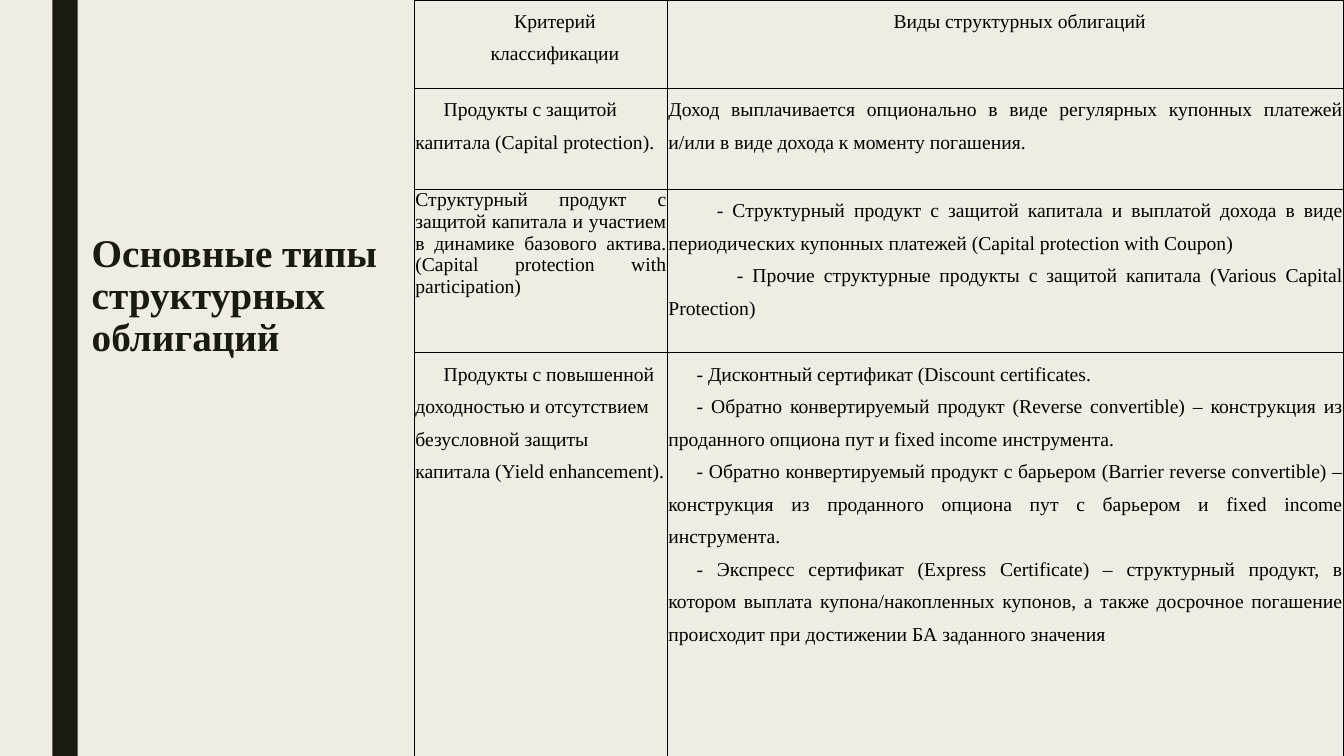
from dataclasses import dataclass

from lxml.etree import SubElement
from pptx import Presentation
from pptx.dml.color import RGBColor
from pptx.enum.shapes import MSO_SHAPE
from pptx.enum.text import MSO_ANCHOR, MSO_AUTO_SIZE, PP_ALIGN
from pptx.oxml.ns import qn
from pptx.util import Inches, Pt


@dataclass(frozen=True)
class Theme:
    """Colours, font and type sizes of the deck."""
    paper: RGBColor = RGBColor(0xEF, 0xED, 0xE3)
    dark: RGBColor = RGBColor(0x19, 0x1B, 0x0E)
    ink: RGBColor = RGBColor(0, 0, 0)
    font: str = "Times New Roman"
    title_size: int = 28
    body_size: int = 14
    border: int = 1


def write(para, text, *, font, size, color, bold=False, align=PP_ALIGN.LEFT, spacing=1.0, indent=0):
    """Write one formatted paragraph."""
    para.alignment = align
    para.line_spacing = spacing
    para.space_before = para.space_after = Pt(0)
    properties = para._p.get_or_add_pPr()
    properties.set("marL", "0")
    properties.set("indent", str(Inches(indent)))
    span = para.add_run()
    span.text = text
    span.font.name = font
    span.font.size = Pt(size)
    span.font.bold = bold
    span.font.color.rgb = color


class Slide:
    """Builds the elements of one page in a given theme."""

    def __init__(self, deck, theme):
        """Add a title-only page with a plain background."""
        self.theme = theme
        self.page = deck.slides.add_slide(deck.slide_layouts[5])
        self.page.background.fill.solid()
        self.page.background.fill.fore_color.rgb = theme.paper

    def bar(self, left, top, width, height):
        """Add a solid bar."""
        box = self.page.shapes.add_shape(
            MSO_SHAPE.RECTANGLE, Inches(left), Inches(top), Inches(width), Inches(height))
        box.shadow.inherit = False
        box.fill.solid()
        box.fill.fore_color.rgb = self.theme.dark
        box.line.fill.background()

    def title(self, text, left, top, width, height):
        """Place and fill the title placeholder."""
        box = self.page.shapes.title
        box.left, box.top = Inches(left), Inches(top)
        box.width, box.height = Inches(width), Inches(height)
        frame = box.text_frame
        frame.word_wrap = True
        frame.auto_size = MSO_AUTO_SIZE.NONE
        frame.vertical_anchor = MSO_ANCHOR.TOP
        write(frame.paragraphs[0], text, font=self.theme.font, size=self.theme.title_size,
              color=self.theme.dark, bold=True, spacing=0.89)

    def table(self, rows, left, top, widths, heights):
        """Add a bordered table whose cells are lists of (text, format) pairs."""
        frame = self.page.shapes.add_table(
            len(rows), len(widths), Inches(left), Inches(top),
            Inches(sum(widths)), Inches(sum(heights)))
        table = frame.table
        table.first_row = table.horz_banding = False
        for column, width in zip(table.columns, widths):
            column.width = Inches(width)
        for row, height, contents in zip(table.rows, heights, rows):
            row.height = Inches(height)
            for cell, paragraphs in zip(row.cells, contents):
                self.cell(cell, paragraphs)

    def cell(self, cell, paragraphs):
        """Fill and outline one table cell."""
        cell.margin_left = cell.margin_right = Inches(0.01)
        cell.margin_top = cell.margin_bottom = 0
        cell.vertical_anchor = MSO_ANCHOR.TOP
        properties = cell._tc.get_or_add_tcPr()
        for side in ("lnL", "lnR", "lnT", "lnB"):
            line = SubElement(properties, qn(f"a:{side}"), w=str(Pt(self.theme.border)))
            fill = SubElement(line, qn("a:solidFill"))
            SubElement(fill, qn("a:srgbClr"), val=str(self.theme.ink))
        cell.fill.background()
        for number, (text, style) in enumerate(paragraphs):
            frame = cell.text_frame
            para = frame.add_paragraph() if number else frame.paragraphs[0]
            write(para, text, font=self.theme.font, size=self.theme.body_size,
                  color=self.theme.ink, **style)


HEADER = dict(align=PP_ALIGN.CENTER, spacing=1.5, indent=0.28)
CRITERION = dict(spacing=1.5, indent=0.28)
PLAIN = dict(align=PP_ALIGN.JUSTIFY, spacing=1.5)
DENSE = dict(align=PP_ALIGN.JUSTIFY)
ITEM = dict(PLAIN, indent=0.28)

BOND_TYPES = [
    [
        [("Критерий", HEADER), ("классификации", HEADER)],
        [("Виды структурных облигаций", HEADER)],
    ],
    [
        [("Продукты с защитой капитала (Capital protection).", CRITERION)],
        [("Доход выплачивается опционально в виде регулярных купонных платежей "
          "и/или в виде дохода к моменту погашения.", PLAIN)],
    ],
    [
        [("Структурный продукт с защитой капитала и участием в динамике базового актива. "
          "(Capital protection with participation)", DENSE)],
        [("- Структурный продукт с защитой капитала и выплатой дохода в виде "
          "периодических купонных платежей (Capital protection with Coupon)",
          dict(PLAIN, indent=0.48)),
         ("- Прочие структурные продукты с защитой капитала (Various Capital Protection)",
          dict(PLAIN, indent=0.68))],
    ],
    [
        [("Продукты с повышенной доходностью и отсутствием безусловной защиты "
          "капитала (Yield enhancement).", CRITERION)],
        [("- Дисконтный сертификат (Discount certificates.", ITEM),
         ("- Обратно конвертируемый продукт (Reverse convertible) – конструкция из "
          "проданного опциона пут и fixed income инструмента.", ITEM),
         ("- Обратно конвертируемый продукт с барьером (Barrier reverse convertible) – "
          "конструкция из проданного опциона пут с барьером и fixed income инструмента.", ITEM),
         ("- Экспресс сертификат (Express Certificate) – структурный продукт, в котором "
          "выплата купона/накопленных купонов, а также досрочное погашение происходит "
          "при достижении БА заданного значения", ITEM)],
    ],
]


def main():
    """Build and save the deck."""
    deck = Presentation()
    deck.slide_width, deck.slide_height = Inches(13.33), Inches(7.5)
    slide = Slide(deck, Theme())
    slide.bar(0.52, 0, 0.25, 7.5)
    slide.title("Основные типы структурных облигаций", 0.81, 2.27, 3.97, 2.62)
    slide.table(BOND_TYPES, 4.11, 0, widths=[2.51, 6.71], heights=[0.88, 1, 1.62, 4.13])
    deck.save("out.pptx")


if __name__ == "__main__":
    main()
